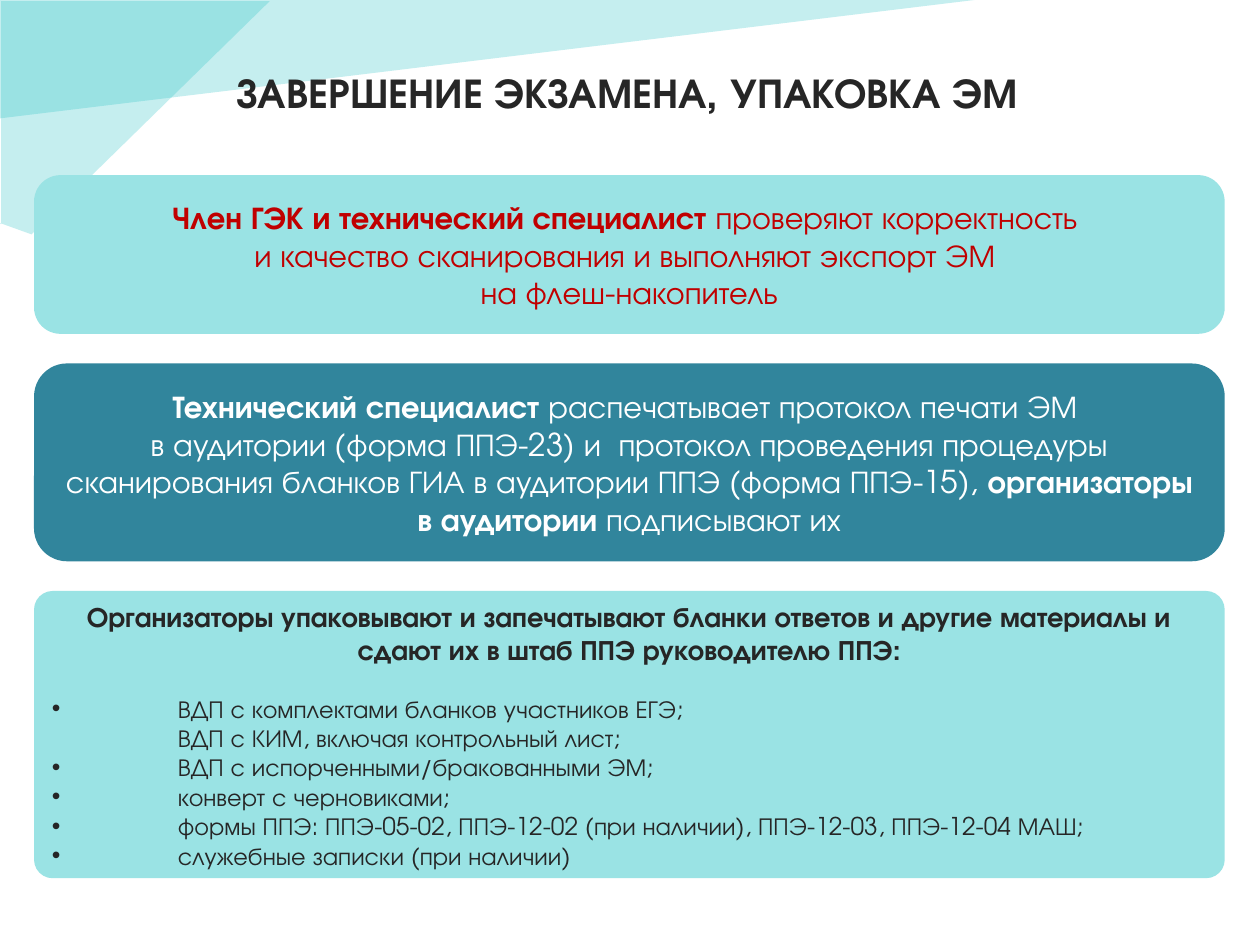
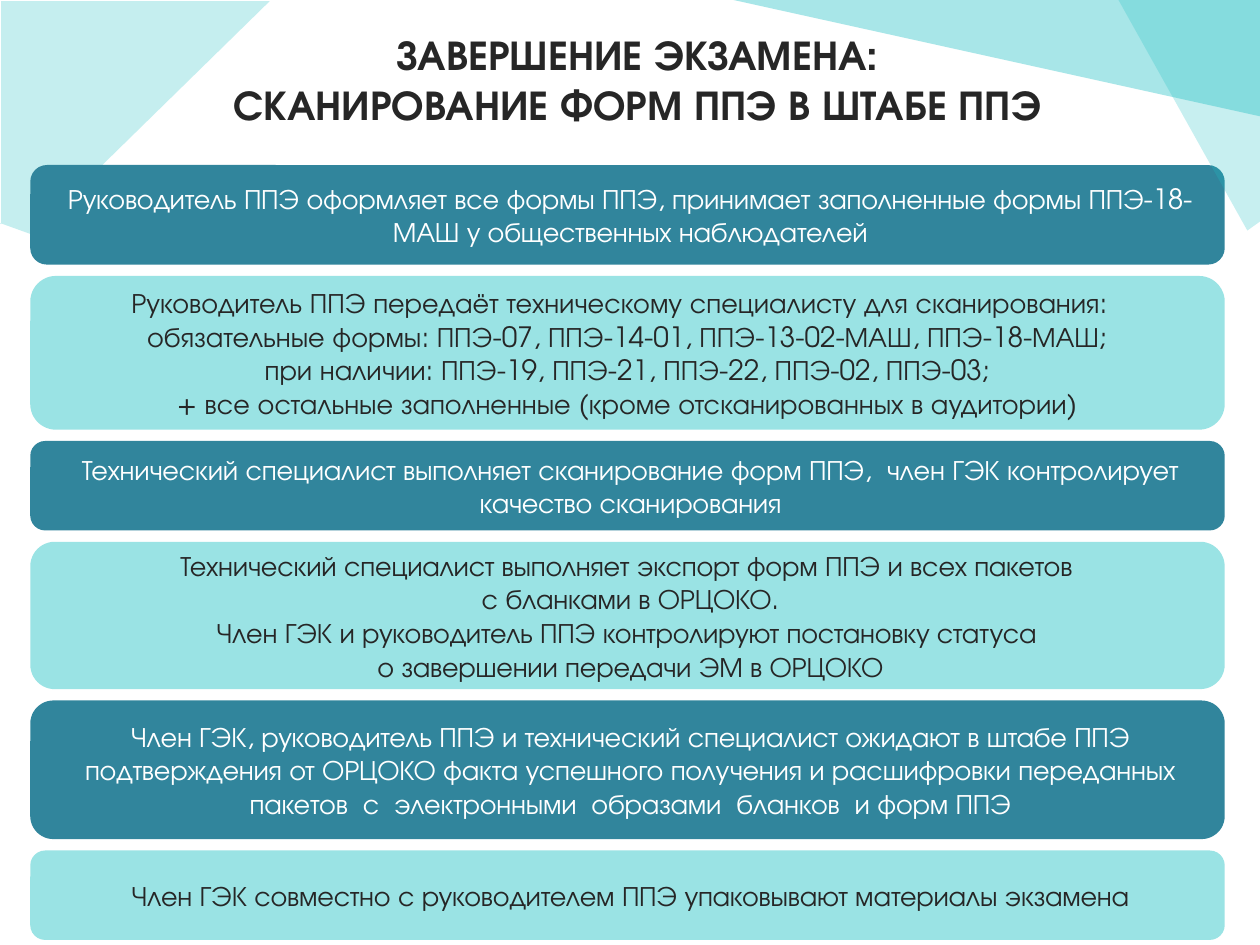
from copy import deepcopy

from lxml.etree import SubElement
from pptx import Presentation
from pptx.enum.shapes import MSO_SHAPE
from pptx.enum.text import MSO_ANCHOR, PP_ALIGN
from pptx.oxml.ns import qn
from pptx.util import Inches, Pt

FONT = "TeX Gyre Adventor"
INK, RED, WHITE = "262626", "C00000", "FFFFFF"
AQUA, TEAL, WEDGE = "9AE3E4", "31859C", "20C0C4"

deck = Presentation()
deck.slide_width, deck.slide_height = Inches(10), Inches(7.5)
CELL = deck.slide_width / 100  # the slide is a grid of 100 columns by 75 rows


def paint(fill, color, opacity=100):
    fill.solid()
    fill.fore_color.rgb = RGBColor.from_string(color)
    if opacity < 100:
        tint = fill._xPr.find(".//" + qn("a:srgbClr"))
        SubElement(tint, qn("a:alpha"), val=str(opacity * 1000))


def write(shape, paragraphs, size, color, before=0, tight=False):
    """Centred text; pieces between asterisks are bold, newlines are line breaks."""
    frame = shape.text_frame
    frame.word_wrap = True
    frame.vertical_anchor = MSO_ANCHOR.MIDDLE
    for number, text in enumerate(paragraphs):
        para = frame.add_paragraph() if number else frame.paragraphs[0]
        para.alignment = PP_ALIGN.CENTER
        para.space_before = Pt(before)
        if tight:
            para._p.get_or_add_pPr().set("marL", str(Inches(0.05)))
        for place, piece in enumerate(text.split("*")):
            for line_number, line in enumerate(piece.split("\n")):
                if line_number:
                    para.add_line_break()
                if not line:
                    continue
                span = para.add_run()
                span.text = line
                span.font.name = FONT
                span.font.size = Pt(size)
                span.font.bold = place % 2 == 1
                paint(span.font.fill, color)
                if tight:
                    span.font._element.set("spc", "-10")
        for line_break in para._p.findall(qn("a:br")):
            line_break.append(deepcopy(para.runs[0].font._element))


from pptx.dml.color import RGBColor

# Corner wedges: outline in grid cells, opacity in percent
left_corner = ([(0, 17.7), (2.5, 18.6), (21.4, 0.1), (0.1, 0.1), (0.1, 17.8)], 26)
top_band = ([(78.2, -0.1), (0, 9.4), (0, -0.2)], 26)
right_band = ([(57.3, -0.2), (100.3, 9.3), (100.3, -0.3)], 39)
right_corner = ([(100.4, 17.3), (99, 18.3), (88.6, -0.3), (100.3, -0.3), (100.3, 17.5)], 25)

# Steps: height in rows, fill, text colour, text size, space before, tight, paragraphs
closing_steps = [
    (12.6, AQUA, RED, 18, 5.8, False, [
        "*Член ГЭК и технический специалист *проверяют корректность \n"
        "и качество сканирования и выполняют экспорт ЭМ \nна флеш-накопитель"]),
    (15.7, TEAL, WHITE, 18, 4.5, False, [
        "*Технический специалист *распечатывает протокол печати ЭМ \n"
        "в аудитории (форма ППЭ-23) и  протокол проведения процедуры "
        "сканирования бланков ГИА в аудитории ППЭ (форма ППЭ-15), "
        "*организаторы в аудитории *подписывают их"]),
    (22.8, AQUA, INK, 16, 5.8, False, [
        "*Организаторы упаковывают и запечатывают бланки ответов и другие "
        "материалы и сдают их в штаб ППЭ руководителю ППЭ:*"]),
]
package_items = [
    "ВДП с комплектами бланков участников ЕГЭ;\nВДП с КИМ, включая контрольный лист;",
    "ВДП с испорченными/бракованными ЭМ;",
    "конверт с черновиками;",
    "формы ППЭ: ППЭ-05-02, ППЭ-12-02 (при наличии), ППЭ-12-03, ППЭ-12-04 МАШ;",
    "служебные записки (при наличии)",
]
scanning_steps = [
    (7.9, TEAL, WHITE, 16, 0, True, [
        "Руководитель ППЭ оформляет все формы ППЭ, принимает заполненные "
        "формы ППЭ-18-МАШ у общественных наблюдателей"]),
    (12.2, AQUA, INK, 16, 0, False, [
        "Руководитель ППЭ передаёт техническому специалисту для сканирования:  \n"
        "обязательные формы: ППЭ-07, ППЭ-14-01, ППЭ-13-02-МАШ, ППЭ-18-МАШ;",
        "при наличии: ППЭ-19, ППЭ-21, ППЭ-22, ППЭ-02, ППЭ-03;",
        "+ все остальные заполненные (кроме отсканированных в аудитории)"]),
    (7.1, TEAL, WHITE, 16, 0, True, [
        "Технический специалист выполняет сканирование форм ППЭ,  "
        "член ГЭК контролирует качество сканирования"]),
    (11.7, AQUA, INK, 16, 0, True, [
        "Технический специалист выполняет экспорт форм ППЭ и всех пакетов \n"
        "с бланками в ОРЦОКО.",
        "Член ГЭК и руководитель ППЭ контролируют постановку статуса \n"
        "о завершении передачи ЭМ в ОРЦОКО"]),
    (11, TEAL, WHITE, 16, 0, True, [
        "Член ГЭК, руководитель ППЭ и технический специалист ожидают в штабе ППЭ "
        "подтверждения от ОРЦОКО факта успешного получения и расшифровки переданных "
        "пакетов  с  электронными  образами  бланков  и форм ППЭ"]),
    (7.1, AQUA, INK, 16, 0, True, [
        "Член ГЭК совместно с руководителем ППЭ упаковывают материалы экзамена"]),
]

# Slides: title, title place, left/top/width/gap of the stack, steps, wedges behind and in front
pages = [
    ("*ЗАВЕРШЕНИЕ ЭКЗАМЕНА, УПАКОВКА ЭМ*", (-0.8, 1.5, 101.2, 11.5),
     (2.7, 13.9, 94.5, 2.35), closing_steps, [top_band, left_corner], []),
    ("*ЗАВЕРШЕНИЕ ЭКЗАМЕНА:\nСКАНИРОВАНИЕ ФОРМ ППЭ В ШТАБЕ ППЭ*", (1.6, 0.5, 98, 11.5),
     (2.4, 13.1, 94.8, 0.9), scanning_steps, [left_corner], [right_band, right_corner]),
]

for title, title_place, (left, top, width, gap), steps, behind, in_front in pages:
    page = deck.slides.add_slide(deck.slide_layouts[6])
    for layer in (behind, steps, in_front):
        # Title and stacked steps
        if layer is steps:
            title_box = page.shapes.add_textbox(*(round(n * CELL) for n in title_place))
            write(title_box, [title], 24, INK)
            for height, fill, color, size, before, tight, paragraphs in steps:
                box = page.shapes.add_shape(
                    MSO_SHAPE.ROUNDED_RECTANGLE,
                    *(round(n * CELL) for n in (left, top, width, height)))
                box.shadow.inherit = False
                box.line.fill.background()
                paint(box.fill, fill)
                write(box, paragraphs, size, color, before, tight)
                top += height + gap
            continue
        # Corner wedges
        for points, opacity in layer:
            outline = [(round(x * CELL), round(y * CELL)) for x, y in points]
            builder = page.shapes.build_freeform(*outline[0], scale=1.0)
            builder.add_line_segments(outline[1:], close=True)
            wedge = builder.convert_to_shape()
            wedge.shadow.inherit = False
            wedge.line.fill.background()
            paint(wedge.fill, WEDGE, opacity)

    # Bulleted package contents in the last step of the first slide
    if steps is closing_steps:
        box.adjustments[0] = 0.065
        heading_count = len(box.text_frame.paragraphs)
        for item in package_items:
            para = box.text_frame.add_paragraph()
            para.text = item
            para.alignment = PP_ALIGN.LEFT
            properties = para._p.get_or_add_pPr()
            properties.set("marL", str(Inches(1)))
            properties.set("indent", str(-Inches(1)))
            SubElement(properties, qn("a:buFont"), typeface="Arial")
            SubElement(properties, qn("a:buChar"), char="•")
            for span in para.runs:
                span.font.name = FONT
                span.font.size = Pt(14)
                paint(span.font.fill, INK)
            for line_break in para._p.findall(qn("a:br")):
                line_break.append(deepcopy(para.runs[0].font._element))
        box.text_frame.paragraphs[heading_count].space_before = Pt(15.5)

deck.save("out.pptx")
